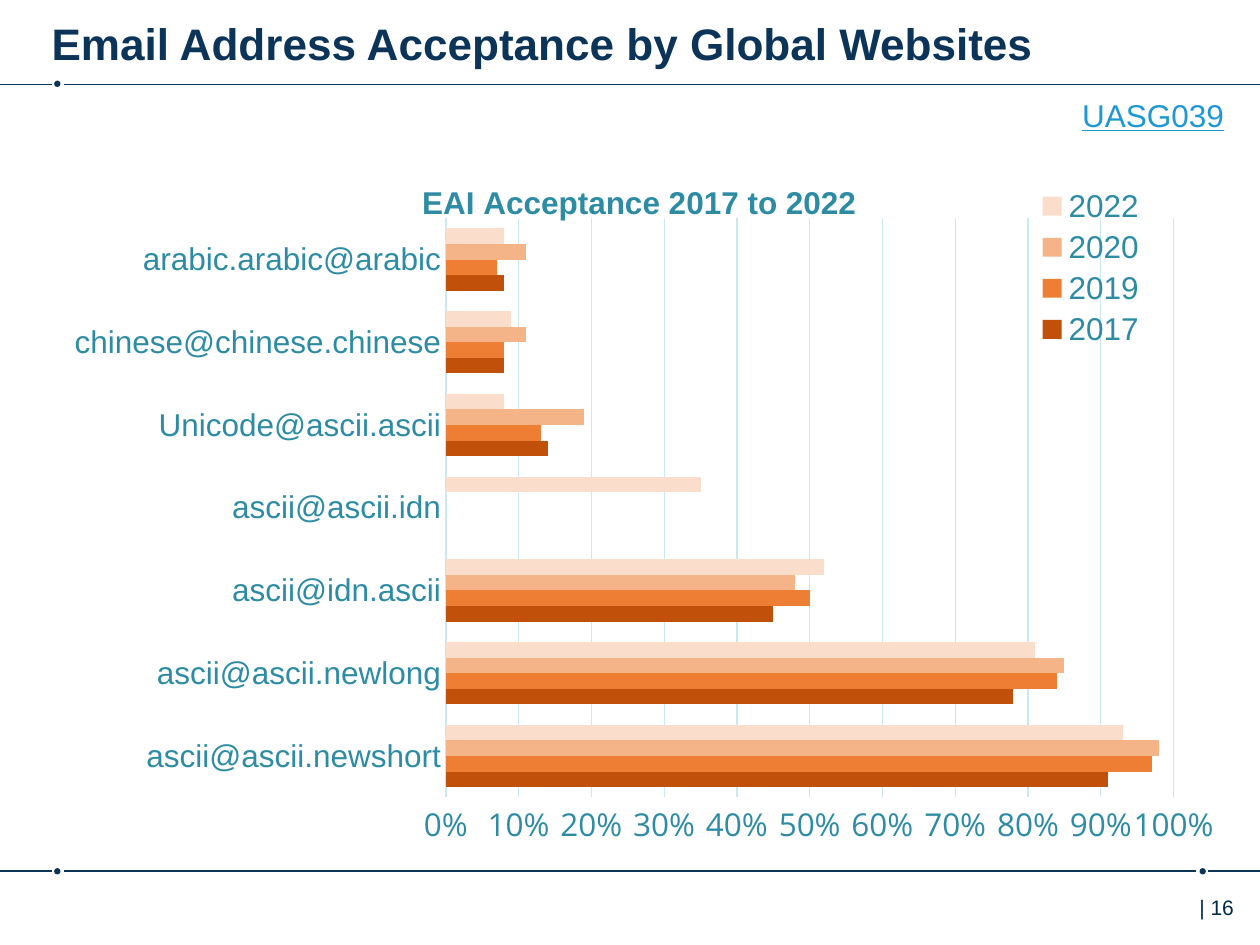
from dataclasses import dataclass

from lxml import etree
from pptx import Presentation
from pptx.chart.data import CategoryChartData
from pptx.dml.color import RGBColor
from pptx.enum.chart import XL_CHART_TYPE, XL_LEGEND_POSITION, XL_TICK_MARK
from pptx.enum.shapes import MSO_CONNECTOR, MSO_SHAPE
from pptx.oxml import parse_xml
from pptx.oxml.ns import nsdecls, qn
from pptx.util import Inches, Pt


@dataclass(frozen=True)
class Theme:
    navy: RGBColor = RGBColor.from_string("0C3458")
    page_number: RGBColor = RGBColor.from_string("002B49")
    link: RGBColor = RGBColor.from_string("1D98D3")
    label: RGBColor = RGBColor.from_string("2D8CA3")
    grid: RGBColor = RGBColor.from_string("C9E8F0")
    font: str = "Arial"
    axis_font: str = "Open Sans"
    heading_size: float = 25.2
    body_size: float = 18
    small_size: float = 12


THEME = Theme()


def style_font(font, size, color, name=THEME.font, bold=False):
    font.size = Pt(size)
    font.color.rgb = color
    font.name = name
    font.bold = bold


def manual_layout(x, y, width=None, height=None, inner=False):
    """Return a c:layout element placed in fractions of the chart."""
    target = '<c:layoutTarget val="inner"/>' if inner else ""
    parts = f'<c:xMode val="edge"/><c:yMode val="edge"/><c:x val="{x}"/><c:y val="{y}"/>'
    if width is not None:
        parts += f'<c:w val="{width}"/><c:h val="{height}"/>'
    return parse_xml(
        f'<c:layout {nsdecls("c")}><c:manualLayout>{target}{parts}</c:manualLayout></c:layout>'
    )


prs = Presentation()
prs.slide_width = Inches(10)
prs.slide_height = Inches(7.5)
slide = prs.slides.add_slide(prs.slide_layouts[6])
shapes = slide.shapes

# Header and footer rules, broken by dots
for left, top in ((0.43, 0.64), (0.43, 6.89), (9.52, 6.89)):
    dot = shapes.add_shape(
        MSO_SHAPE.OVAL, Inches(left), Inches(top), Inches(0.05), Inches(0.05)
    )
    dot.shadow.inherit = False
    dot.fill.solid()
    dot.fill.fore_color.rgb = THEME.navy
    dot.line.fill.background()

rules = (
    (0.41, 0, 0.67), (10, 0.51, 0.67),
    (0.41, 0, 6.91), (9.49, 0.51, 6.91), (9.59, 10, 6.91),
)
for start, end, y in rules:
    rule = shapes.add_connector(
        MSO_CONNECTOR.STRAIGHT, Inches(start), Inches(y), Inches(end), Inches(y)
    )
    rule.line.color.rgb = THEME.navy
    rule.line.width = Pt(1)
    etree.SubElement(rule._element.spPr, qn("a:effectLst"))

# Heading, report reference and page number
texts = (
    ("Email Address Acceptance by Global Websites", (0.41, 0.05, 8.76, 0.49),
     (0, 0.08), THEME.heading_size, THEME.navy, True, False),
    ("UASG039", (8.49, 0.71, 1.4, 0.4),
     (0.1, 0.05), THEME.body_size, THEME.link, False, True),
    ("| 16", (9.42, 7.05, 0.58, 0.4),
     (0.1, 0.05), THEME.small_size, THEME.page_number, False, False),
)
for wording, box, (side, top), size, color, bold, underline in texts:
    caption = shapes.add_textbox(*map(Inches, box))
    frame = caption.text_frame
    frame.word_wrap = True
    frame.margin_left = frame.margin_right = Inches(side)
    frame.margin_top = Inches(top)
    run = frame.paragraphs[0].add_run()
    run.text = wording
    style_font(run.font, size, color, bold=bold)
    run.font.underline = underline

# Acceptance chart
acceptance = CategoryChartData(number_format="0%")
acceptance.categories = [
    "ascii@ascii.newshort",
    "ascii@ascii.newlong",
    "ascii@idn.ascii",
    "ascii@ascii.idn",
    "Unicode@ascii.ascii",
    "chinese@chinese.chinese",
    "arabic.arabic@arabic",
]
years = (
    ("2017", "C1500B", (0.91, 0.78, 0.45, None, 0.14, 0.08, 0.08)),
    ("2019", "ED7E33", (0.97, 0.84, 0.5, None, 0.13, 0.08, 0.07)),
    ("2020", "F4B488", (0.98, 0.85, 0.48, None, 0.19, 0.11, 0.11)),
    ("2022", "FADDCA", (0.93, 0.81, 0.52, 0.35, 0.08, 0.09, 0.08)),
)
for year, _, shares in years:
    acceptance.add_series(year, shares)
chart = shapes.add_chart(
    XL_CHART_TYPE.BAR_CLUSTERED,
    Inches(0.3), Inches(1.17), Inches(9.39), Inches(5.62), acceptance,
).chart
style_font(chart.font, THEME.body_size, THEME.label)

plot = chart.plots[0]
plot.gap_width = 130
plot.overlap = 0
plot.vary_by_categories = False
for series, (_, color, _) in zip(plot.series, years):
    series.format.fill.solid()
    series.format.fill.fore_color.rgb = RGBColor.from_string(color)
    series.invert_if_negative = False

address_axis = chart.category_axis
share_axis = chart.value_axis
for axis, font_name in ((address_axis, THEME.font), (share_axis, THEME.axis_font)):
    axis.major_tick_mark = axis.minor_tick_mark = XL_TICK_MARK.NONE
    style_font(axis.tick_labels.font, THEME.body_size, THEME.label, font_name)
address_axis.has_major_gridlines = False
share_axis.has_major_gridlines = True
for line in (address_axis.format.line, share_axis.major_gridlines.format.line):
    line.color.rgb = THEME.grid
    line.width = Pt(0.75)
share_axis.format.line.fill.background()
share_axis.minimum_scale = 0
share_axis.maximum_scale = 1
share_axis.major_unit = 0.1
share_axis.tick_labels.number_format = "0%"
share_axis.tick_labels.number_format_is_linked = False

chart.has_title = True
title_run = chart.chart_title.text_frame.paragraphs[0].add_run()
title_run.text = "EAI Acceptance 2017 to 2022"
style_font(title_run.font, THEME.body_size, THEME.label, bold=True)

chart.has_legend = True
legend = chart.legend
legend.position = XL_LEGEND_POSITION.BOTTOM
legend.include_in_layout = False
style_font(legend.font, THEME.body_size, THEME.label)

# Fixed places for the title, plot area and legend
title_xml = chart.chart_title._element
plot_xml = chart._chartSpace.chart.plotArea
legend_xml = legend._element
for part in (title_xml, plot_xml, legend_xml):
    for old_layout in part.findall(qn("c:layout")):
        part.remove(old_layout)
title_xml.find(qn("c:tx")).addnext(manual_layout(0.32, 0.04))
plot_xml.insert(0, manual_layout(0.345, 0.1, 0.615, 0.818, inner=True))
legend_xml.find(qn("c:legendPos")).addnext(manual_layout(0.84, 0.05, 0.1, 0.24))

prs.save("out.pptx")
